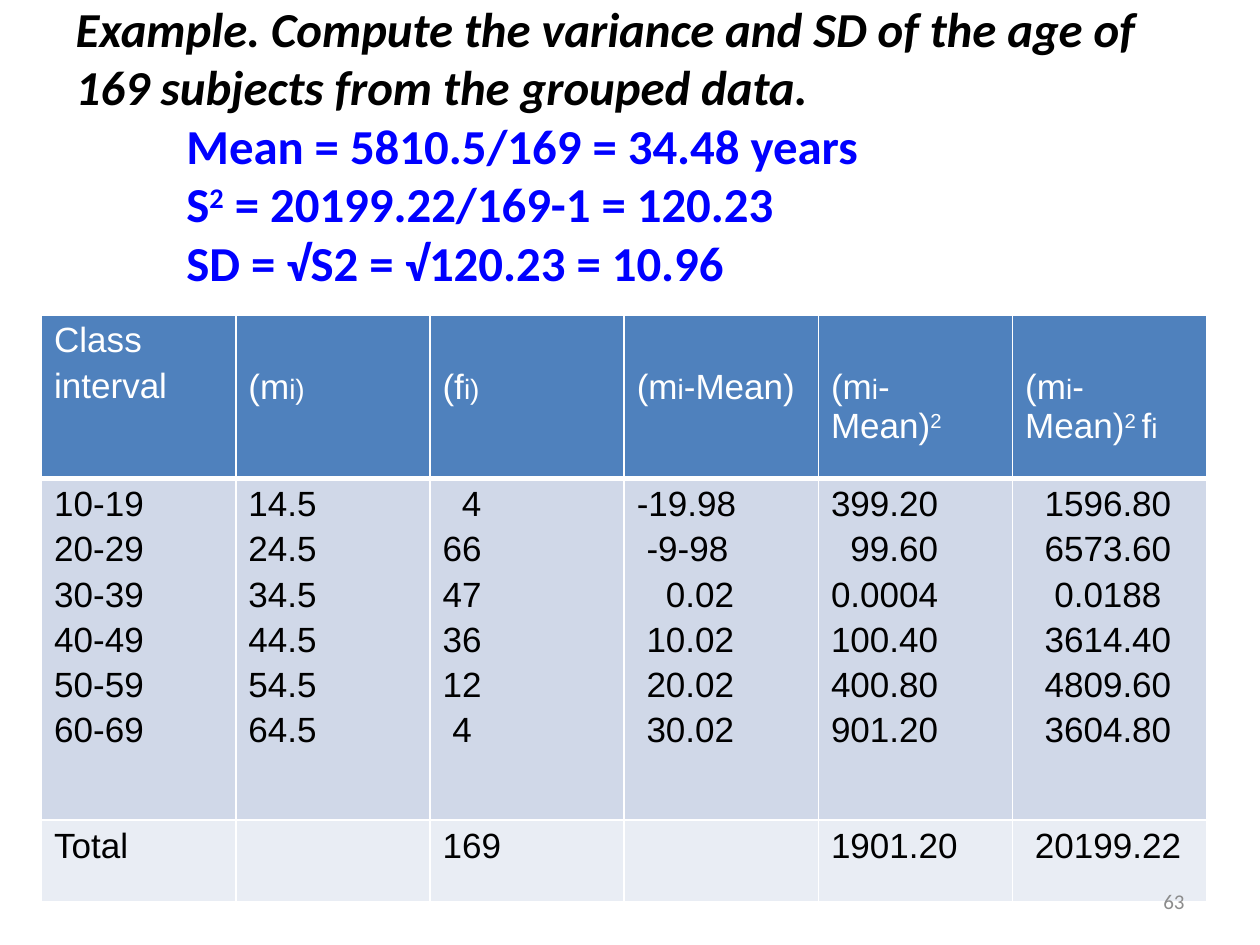
from dataclasses import dataclass

from lxml import etree
from pptx import Presentation
from pptx import util as u
from pptx.dml.color import RGBColor
from pptx.enum import text
from pptx.oxml.ns import qn


@dataclass(frozen=True)
class Theme:
    heading_font: str = "Calibri"
    table_font: str = "Arial"
    black: str = "000000"
    white: str = "FFFFFF"
    blue: str = "0000FF"
    gray: str = "8C8C8C"
    header_fill: str = "4F81BD"
    body_fill: str = "D0D8E8"
    total_fill: str = "E9EDF4"
    title_size: float = 27.9
    table_size: float = 20
    index_size: float = 16
    number_size: float = 12
    row_gap: float = 3.5


THEME = Theme()
SPACE = 0.077  # width of one space in the table font, inches
INDEX = {"size": THEME.index_size}
SUPER = {"baseline": 30}

QUESTION = ("Example. Compute the variance and SD of the age of "
            "169 subjects from the grouped data.")
ANSWERS = [
    ["Mean = 5810.5/169 = 34.48 years"],
    ["S", ("2", SUPER), " = 20199.22/169-1 = 120.23"],
    ["SD = √S2 = √120.23 = 10.96"],
]

# Each column: header paragraphs, values, indents in spaces, total, total indent
DEVIATION = ["(m", ("i", INDEX), "-Mean)"]
LEVEL = [0] * 6
COLUMNS = [
    ([["Class"], ["interval"]],
     ["10-19", "20-29", "30-39", "40-49", "50-59", "60-69"], LEVEL, "Total", 0),
    ([["(m", ("i)", INDEX)]],
     ["14.5", "24.5", "34.5", "44.5", "54.5", "64.5"], LEVEL, "", 0),
    ([["(f", ("i)", INDEX)]],
     ["4", "66", "47", "36", "12", "4"], [2, 0, 0, 0, 0, 1], "169", 0),
    ([DEVIATION],
     ["-19.98", "-9-98", "0.02", "10.02", "20.02", "30.02"], [0, 1, 3, 1, 1, 1], "", 0),
    ([DEVIATION + [("2", SUPER)]],
     ["399.20", "99.60", "0.0004", "100.40", "400.80", "901.20"], [0, 2, 0, 0, 0, 0],
     "1901.20", 0),
    ([DEVIATION + [("2 ", SUPER), "f", ("i", INDEX)]],
     ["1596.80", "6573.60", "0.0188", "3614.40", "4809.60", "3604.80"], [2, 2, 3, 2, 2, 2],
     "20199.22", 1),
]
ROW_HEIGHTS = [1.3, 2.71, 0.65]


def write(paragraph, parts, *, font, size, color, bold=False, italic=False,
          indent=0, before=0, align=text.PP_ALIGN.LEFT):
    """Fill a paragraph; a part is a string or a (string, changes) pair."""
    paragraph.alignment = align
    paragraph.space_before = u.Pt(before)
    if indent:
        properties = paragraph._p.get_or_add_pPr()
        properties.set("marL", str(u.Inches(indent)))
        properties.set("indent", "0")
    for part in parts:
        words, changes = (part, {}) if isinstance(part, str) else part
        run = paragraph.add_run()
        run.text = words
        run.font.name = font
        run.font.size = u.Pt(changes.get("size", size))
        run.font.bold, run.font.italic = bold, italic
        run.font.color.rgb = RGBColor.from_string(color)
        if "baseline" in changes:
            run.font._element.set("baseline", str(changes["baseline"] * 1000))


def paragraph_at(frame, index):
    return frame.paragraphs[0] if index == 0 else frame.add_paragraph()


def style_cell(cell, fill, bottom=1):
    """White borders first, then the fill, as the schema orders them."""
    properties = cell._tc.get_or_add_tcPr()
    for side, width in (("lnL", 1), ("lnR", 1), ("lnT", 1), ("lnB", bottom)):
        line = etree.SubElement(properties, qn(f"a:{side}"), w=str(u.Pt(width)))
        solid = etree.SubElement(line, qn("a:solidFill"))
        etree.SubElement(solid, qn("a:srgbClr"), val=THEME.white)
    cell.fill.solid()
    cell.fill.fore_color.rgb = RGBColor.from_string(fill)


def fill_cell(cell, paragraphs, indents, color):
    for index, (parts, spaces) in enumerate(zip(paragraphs, indents)):
        write(paragraph_at(cell.text_frame, index), parts, font=THEME.table_font,
              size=THEME.table_size, color=color, indent=spaces * SPACE,
              before=THEME.row_gap)


def add_title(slide):
    title = slide.shapes.title
    title.left, title.top = u.Inches(0.5), u.Inches(0)
    title.width, title.height = u.Inches(9), u.Inches(2.3)
    frame = title.text_frame
    frame.auto_size = text.MSO_AUTO_SIZE.NONE
    frame.vertical_anchor = text.MSO_ANCHOR.MIDDLE
    style = {"font": THEME.heading_font, "size": THEME.title_size, "bold": True}
    write(frame.paragraphs[0], [QUESTION], color=THEME.black, italic=True, **style)
    for parts in ANSWERS:
        write(frame.add_paragraph(), parts, color=THEME.blue, indent=0.88, **style)


def add_data_table(slide):
    table = slide.shapes.add_table(
        len(ROW_HEIGHTS), len(COLUMNS), u.Inches(0.33), u.Inches(2.5),
        u.Inches(9.25), u.Inches(sum(ROW_HEIGHTS))).table
    for row, height in zip(table.rows, ROW_HEIGHTS):
        row.height = u.Inches(height)
    for index, (header, values, indents, total, total_indent) in enumerate(COLUMNS):
        head, body, foot = (table.cell(row, index) for row in range(3))
        style_cell(head, THEME.header_fill, bottom=3)
        style_cell(body, THEME.body_fill)
        style_cell(foot, THEME.total_fill)
        fill_cell(head, header, LEVEL, THEME.white)
        if len(header) == 1:  # align one-line headers with the second line
            head.margin_top = u.Inches(0.42)
        fill_cell(body, [[value] for value in values], indents, THEME.black)
        if total:
            fill_cell(foot, [[total]], [total_indent], THEME.black)


def add_page_number(slide):
    box = slide.shapes.add_textbox(
        u.Inches(7.17), u.Inches(6.95), u.Inches(2.33), u.Inches(0.4))
    box.text_frame.word_wrap = True
    box.text_frame.vertical_anchor = text.MSO_ANCHOR.MIDDLE
    write(box.text_frame.paragraphs[0], ["63"], font=THEME.heading_font,
          size=THEME.number_size, color=THEME.gray, align=text.PP_ALIGN.RIGHT)


def main():
    presentation = Presentation()
    presentation.slide_width, presentation.slide_height = u.Inches(10), u.Inches(7.5)
    slide = presentation.slides.add_slide(presentation.slide_layouts[5])
    add_data_table(slide)
    add_title(slide)
    add_page_number(slide)
    presentation.save("out.pptx")


if __name__ == "__main__":
    main()
